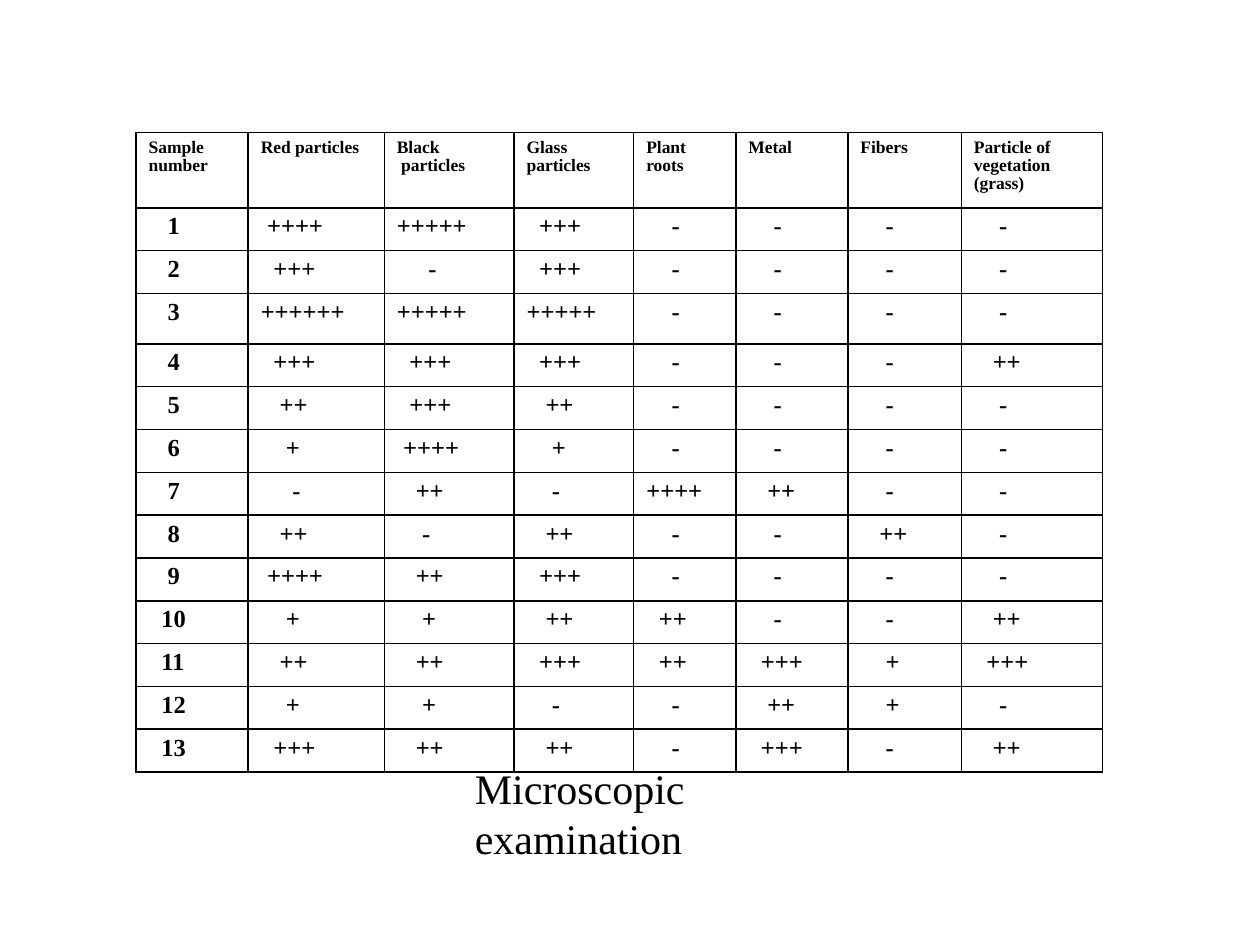
from lxml import etree
from pptx import Presentation
from pptx.dml.color import RGBColor
from pptx.enum import text
from pptx.oxml.ns import qn
from pptx.util import Inches, Pt

BLACK = RGBColor(0, 0, 0)
FACE = "Times New Roman"
HANG = 0.38
STEP = 0.05  # one step of the marks' indent
ROOTS = 4  # column whose plus marks sit one step further left

WIDTHS = [0.89, 1.08, 1.03, 0.95, 0.81, 0.89, 0.9, 1.12]
HEADS = [
    "Sample\nnumber", "Red particles", "Black\n particles", "Glass\nparticles",
    "Plant\nroots", "Metal", "Fibers", "Particle of\nvegetation\n(grass)",
]
MARKS = [
    "++++ +++++ +++ - - - -",
    "+++ - +++ - - - -",
    "++++++ +++++ +++++ - - - -",
    "+++ +++ +++ - - - ++",
    "++ +++ ++ - - - -",
    "+ ++++ + - - - -",
    "- ++ - ++++ ++ - -",
    "++ - ++ - - ++ -",
    "++++ ++ +++ - - - -",
    "+ + ++ ++ - - ++",
    "++ ++ +++ ++ +++ + +++",
    "+ + - - ++ + -",
    "+++ ++ ++ - +++ - ++",
]
WIDE = {(2, 2), (7, 1)}  # row, column of the dashes set one step further right


def style(par, size, bold, align):
    par.alignment = align
    font = par.font
    font.name, font.size, font.bold = FACE, Pt(size), bold
    font.color.rgb = BLACK


def frame(cell):
    """Draw a thin black border on all four sides."""
    props = cell._tc.get_or_add_tcPr()
    for i, side in enumerate(("lnL", "lnR", "lnT", "lnB")):
        line = etree.Element(qn(f"a:{side}"), w=str(Pt(1)))
        fill = etree.SubElement(line, qn("a:solidFill"))
        etree.SubElement(fill, qn("a:srgbClr"), val=str(BLACK))
        props.insert(i, line)


def write(cell, words, size, steps=0, align=text.PP_ALIGN.JUSTIFY):
    cell.fill.background()
    frame(cell)
    cell.text = words
    for par in cell.text_frame.paragraphs:
        style(par, size, True, align)
        par.line_spacing = 0.95
        props = par._p.get_or_add_pPr()
        props.set("marL", str(Inches(HANG)))
        props.set("indent", str(Inches(STEP * steps - HANG)))


def indent(mark, row, col):
    """Steps that bring a mark near the middle of its column."""
    if col == 0:
        return 4 - len(mark)
    shift = (col == ROOTS and mark != "-") - ((row, col) in WIDE)
    return max(0, 5 - len(mark) - shift)


def add_grid(slide):
    heights = [0.6] + [0.4 if row == 3 else 0.34 for row in range(1, 14)]
    grid = slide.shapes.add_table(
        len(heights), len(WIDTHS), Inches(1.08), Inches(1.05),
        Inches(sum(WIDTHS)), Inches(sum(heights))).table
    for col, width in zip(grid.columns, WIDTHS):
        col.width = Inches(width)
    for row, height in zip(grid.rows, heights):
        row.height = Inches(height)
    for col, head in enumerate(HEADS):
        last = col == len(HEADS) - 1
        align = text.PP_ALIGN.LEFT if last else text.PP_ALIGN.JUSTIFY
        write(grid.cell(0, col), head, 10, align=align)
    for row, marks in enumerate(MARKS, 1):
        for col, mark in enumerate([str(row)] + marks.split()):
            write(grid.cell(row, col), mark, 14, indent(mark, row, col))


def add_label(slide):
    box = slide.shapes.add_textbox(
        Inches(3.67), Inches(6.25), Inches(2.94), Inches(0.4))
    body = box.text_frame
    body.word_wrap = True
    body.auto_size = text.MSO_AUTO_SIZE.SHAPE_TO_FIT_TEXT
    body.vertical_anchor = text.MSO_ANCHOR.MIDDLE
    body.text = "Microscopic examination"
    style(body.paragraphs[0], 24, False, text.PP_ALIGN.JUSTIFY)


def main():
    deck = Presentation()
    deck.slide_width, deck.slide_height = Inches(10), Inches(7.5)
    slide = deck.slides.add_slide(deck.slide_layouts[6])
    add_grid(slide)
    add_label(slide)
    deck.save("out.pptx")


if __name__ == "__main__":
    main()
